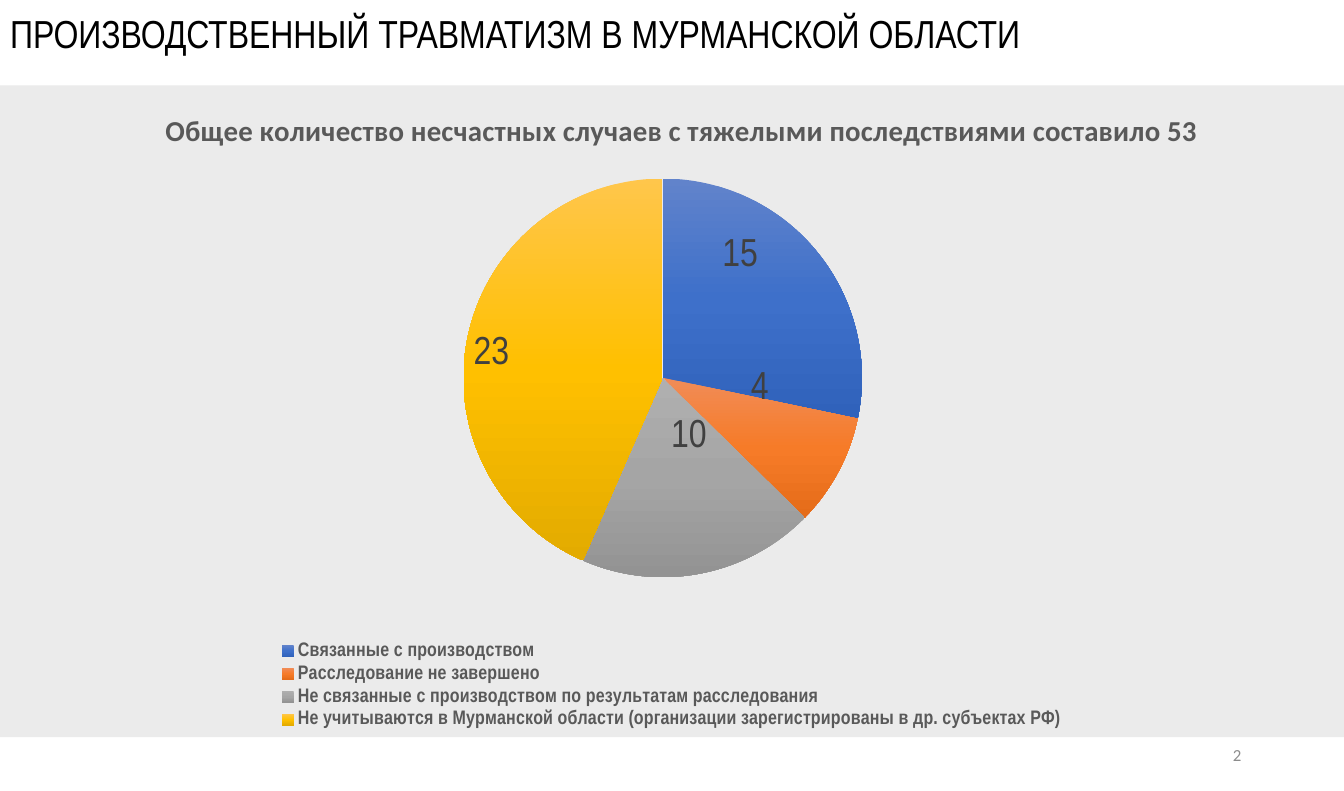
from copy import deepcopy

from lxml.etree import SubElement
from pptx import Presentation
from pptx.chart.data import CategoryChartData
from pptx.dml.color import RGBColor
from pptx.enum.chart import XL_CHART_TYPE, XL_LABEL_POSITION, XL_LEGEND_POSITION
from pptx.enum.shapes import MSO_SHAPE
from pptx.enum.text import MSO_ANCHOR, MSO_AUTO_SIZE, PP_ALIGN
from pptx.oxml.ns import qn
from pptx.util import Cm, Pt

# Content
TITLE = "ПРОИЗВОДСТВЕННЫЙ ТРАВМАТИЗМ В МУРМАНСКОЙ ОБЛАСТИ"
CHART_TITLE = "Общее количество несчастных случаев с тяжелыми последствиями составило 53"
PAGE_NUMBER = "2"
# Category, share in percent, label, label offset (percent of chart size), gradient
SLICES = [
    ("Связанные с производством", 28, "15", (0, -9.2),
     ("6183CB", "3E70CA", "3062BB")),
    ("Расследование не завершено", 9, "4", (0.7, -5.5),
     ("F18C57", "F67B28", "E56C19")),
    ("Не связанные с производством по результатам расследования", 19, "10", (0.55, -6),
     ("AFAFAF", "A5A5A5", "939393")),
    ("Не учитываются в Мурманской области (организации зарегистрированы в др. субъектах РФ)",
     43, "23", (-5.6, -0.4), ("FFC64B", "FFC000", "E3AB00")),
]
COLORS = {"panel": "EBEBEB", "title": "000000", "chart": "595959",
          "label": "404040", "page": "8C8C8C"}
NARROW, BODY = "Arial Narrow", "Calibri"
WIDTH, HEIGHT = Cm(34), Cm(20)


def box(left, top, width, height):
    """Turn percentages of the slide into lengths."""
    return tuple(round(share * side / 100) for share, side in
                 ((left, WIDTH), (top, HEIGHT), (width, WIDTH), (height, HEIGHT)))


def style_font(font, size, color, name=NARROW, bold=False):
    font.size, font.name, font.bold = Pt(size), name, bold
    font.color.rgb = RGBColor.from_string(color)


def write_text(frame, text, size, color, name=NARROW, bold=False,
               align=None, anchor=None):
    paragraph = frame.paragraphs[0]
    run = paragraph.add_run()
    run.text = text
    style_font(run.font, size, color, name, bold)
    if align is not None:
        paragraph.alignment = align
    if anchor is not None:
        frame.vertical_anchor = anchor


def place_in_chart(element, index, modes=(), **percentages):
    """Give a chart part a manual layout in percent of the chart."""
    for old in element.findall(qn("c:layout")):
        element.remove(old)
    layout = SubElement(element, qn("c:layout"))
    element.insert(index, layout)
    manual = SubElement(layout, qn("c:manualLayout"))
    for tag, value in modes:
        SubElement(manual, qn("c:" + tag)).set("val", value)
    for tag, value in percentages.items():
        SubElement(manual, qn("c:" + tag)).set("val", str(round(value / 100, 4)))


def fill_gradient(fill, colors):
    fill.gradient()
    fill.gradient_angle = 270
    first, last = fill.gradient_stops
    for stop, position, color in ((first, 0, colors[0]), (last, 1, colors[2])):
        stop.position = position
        stop.color.rgb = RGBColor.from_string(color)
    middle = deepcopy(first._gs)
    first._gs.addnext(middle)
    middle.set("pos", "50000")
    middle[0].set("val", colors[1])


# Slide and title
presentation = Presentation()
presentation.slide_width, presentation.slide_height = WIDTH, HEIGHT
slide = presentation.slides.add_slide(presentation.slide_layouts[5])
title = slide.shapes.title
title.left, title.top, title.width, title.height = box(0, 0.5, 102.5, 7.27)
write_text(title.text_frame, TITLE, 28, COLORS["title"],
           align=PP_ALIGN.LEFT, anchor=MSO_ANCHOR.TOP)
title.text_frame.auto_size = MSO_AUTO_SIZE.NONE

# Panel behind the chart
panel = slide.shapes.add_shape(MSO_SHAPE.RECTANGLE, *box(0, 10.8, 100, 82.4))
panel.shadow.inherit = False
panel.fill.solid()
panel.fill.fore_color.rgb = RGBColor.from_string(COLORS["panel"])
panel.line.fill.background()

# Page number
page = slide.shapes.add_textbox(*box(70.6, 92.8, 22.5, 5.3)).text_frame
page.word_wrap = True
write_text(page, PAGE_NUMBER, 12.1, COLORS["page"], BODY,
           align=PP_ALIGN.RIGHT, anchor=MSO_ANCHOR.MIDDLE)

# Pie chart
chart_data = CategoryChartData()
chart_data.categories = [entry[0] for entry in SLICES]
chart_data.add_series("Series 1", [entry[1] for entry in SLICES])
chart = slide.shapes.add_chart(XL_CHART_TYPE.PIE, *box(0.82, 12.19, 98.16, 80.52),
                               chart_data).chart
style_font(chart.font, 10, COLORS["title"], BODY)
plot = chart.plots[0]
plot.vary_by_categories = True
EDGES = (("xMode", "edge"), ("yMode", "edge"))
place_in_chart(chart._chartSpace.chart.plotArea, 0, (("layoutTarget", "inner"), *EDGES),
               x=34.3, y=12.9, w=30.2, h=62.6)

# Chart title and legend
chart.has_title = True
write_text(chart.chart_title.text_frame, CHART_TITLE, 20.7, COLORS["chart"], BODY, bold=True)
place_in_chart(chart.chart_title._element, 1, EDGES, x=11.3, y=1.3)
chart.has_legend = True
chart.legend.position = XL_LEGEND_POSITION.BOTTOM
chart.legend.include_in_layout = False
style_font(chart.legend.font, 14, COLORS["chart"], bold=True)
place_in_chart(chart.legend._element, 1, EDGES, x=19.1, y=85, w=62, h=15)

# Slices and their labels
for number, (_, _, text, _, colors) in enumerate(SLICES):
    point = plot.series[0].points[number]
    fill_gradient(point.format.fill, colors)
    point.format.line.fill.background()
    write_text(point.data_label.text_frame, text, 28, COLORS["label"])
    point.data_label.position = XL_LABEL_POSITION.CENTER
for label, (_, _, _, (shift_x, shift_y), _) in zip(chart._chartSpace.iter(qn("c:dLbl")), SLICES):
    place_in_chart(label, 1, x=shift_x, y=shift_y)

presentation.save("out.pptx")
